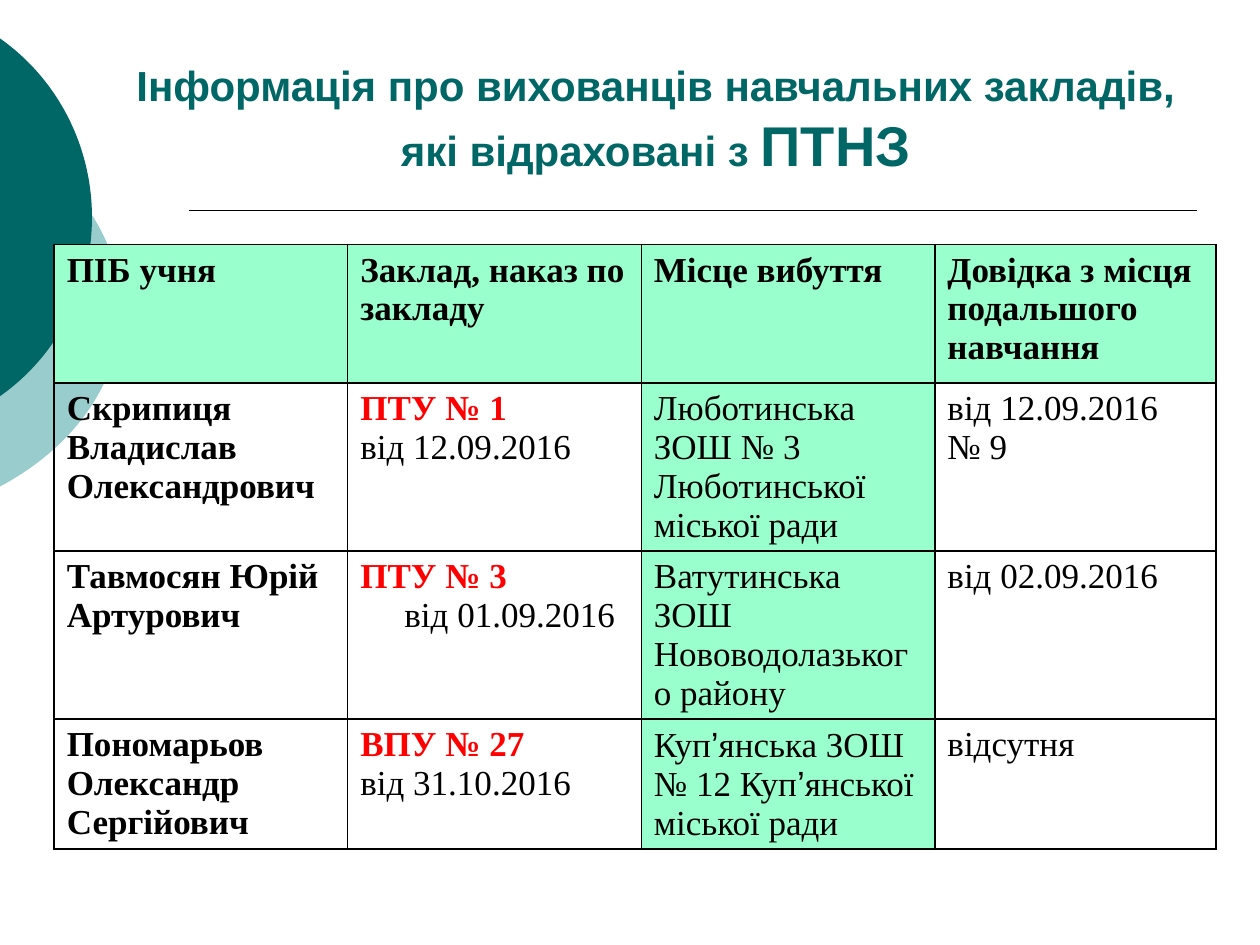
from dataclasses import dataclass

from lxml.etree import SubElement
from pptx import Presentation
from pptx.dml.color import RGBColor
from pptx.enum.shapes import MSO_CONNECTOR, MSO_SHAPE
from pptx.enum.text import MSO_ANCHOR, PP_ALIGN
from pptx.oxml.ns import qn
from pptx.util import Inches, Pt


@dataclass(frozen=True)
class Theme:
    teal: RGBColor = RGBColor(0x00, 0x66, 0x66)
    pale_teal: RGBColor = RGBColor(0x99, 0xCC, 0xCC)
    mint: RGBColor = RGBColor(0x99, 0xFF, 0xCC)
    red: RGBColor = RGBColor(0xFF, 0x00, 0x00)
    black: RGBColor = RGBColor(0x00, 0x00, 0x00)
    sans: str = "Arial"
    serif: str = "Times New Roman"
    title_size: Pt = Pt(24)
    accent_size: Pt = Pt(32)
    cell_size: Pt = Pt(20)
    line_width: Pt = Pt(1)


THEME = Theme()
HEADINGS = ["ПІБ учня", "Заклад, наказ по закладу", "Місце вибуття",
            "Довідка з місця подальшого навчання"]
# Pupil, school, order date, order indent, destination, certificate
PUPILS = [
    ("Скрипиця Владислав Олександрович", "ПТУ № 1", "від 12.09.2016", 0,
     "Люботинська ЗОШ № 3 Люботинської міської ради", "від 12.09.2016 № 9"),
    ("Тавмосян Юрій Артурович", "ПТУ № 3", "від 01.09.2016", 0.35,
     "Ватутинська ЗОШ Нововодолазького району", "від 02.09.2016"),
    ("Пономарьов Олександр Сергійович", "ВПУ № 27", "від 31.10.2016", 0,
     "Куп’янська ЗОШ № 12 Куп’янської міської ради", "відсутня"),
]


def apply_format(target, values):
    for name, value in values.items():
        setattr(target, name, value)


def add_run(paragraph, text, color=THEME.black, **values):
    run = paragraph.add_run()
    run.text = text
    apply_format(run.font, values)
    run.font.color.rgb = color


def add_disc(slide, left, top, width, height, color):
    disc = slide.shapes.add_shape(MSO_SHAPE.OVAL, left, top, width, height)
    disc.shadow.inherit = False
    disc.fill.solid()
    disc.fill.fore_color.rgb = color
    disc.line.fill.background()


def add_backdrop(slide):
    add_disc(slide, Inches(-3.54), Inches(0.75), Inches(4.5), Inches(3.42), THEME.pale_teal)
    add_disc(slide, Inches(-2.65), Inches(0), Inches(3.38), Inches(3.45), THEME.teal)


def add_rule(slide, left, top, width):
    rule = slide.shapes.add_connector(MSO_CONNECTOR.STRAIGHT, left, top, left + width, top)
    rule.line.color.rgb = THEME.black
    rule.line.width = THEME.line_width
    SubElement(rule._element.spPr, qn("a:effectLst"))


def add_title(slide, left, top, width, height):
    title = slide.shapes.title
    apply_format(title, dict(left=left, top=top, width=width, height=height))
    apply_format(title.text_frame, dict(vertical_anchor=MSO_ANCHOR.BOTTOM, word_wrap=True))
    heading = title.text_frame.paragraphs[0]
    heading.alignment = PP_ALIGN.CENTER
    for text, size in [
        ("Інформація про вихованців навчальних закладів, які відраховані з ", THEME.title_size),
        ("ПТНЗ", THEME.accent_size),
    ]:
        add_run(heading, text, THEME.teal, size=size, bold=True, name=THEME.sans)


def add_borders(cell):
    properties = cell._tc.get_or_add_tcPr()
    for position, side in enumerate(("lnL", "lnR", "lnT", "lnB")):
        border = SubElement(properties, qn(f"a:{side}"), w=str(THEME.line_width))
        fill = SubElement(border, qn("a:solidFill"))
        SubElement(fill, qn("a:srgbClr"), val=str(THEME.black))
        properties.insert(position, border)


def fill_cell(cell, lines, shaded):
    """Write (text, bold, color, indent) lines into a bordered cell."""
    if shaded:
        cell.fill.solid()
        cell.fill.fore_color.rgb = THEME.mint
    else:
        cell.fill.background()
    add_borders(cell)
    for number, (text, bold, color, indent) in enumerate(lines):
        frame = cell.text_frame
        paragraph = frame.add_paragraph() if number else frame.paragraphs[0]
        if indent:
            paragraph._p.get_or_add_pPr().set("marL", str(Inches(indent)))
        # The apostrophe is set in the sans face
        for part in text.replace("’", "|’|").split("|"):
            face = THEME.sans if part == "’" else THEME.serif
            add_run(paragraph, part, color, size=THEME.cell_size, bold=bold, name=face)


def add_pupil_table(slide, left, top, widths, heights):
    table = slide.shapes.add_table(len(heights), len(widths), left, top,
                                   sum(widths), sum(heights)).table
    apply_format(table, dict(first_row=False, horz_banding=False))
    for column, width in zip(table.columns, widths):
        column.width = width
    for row, height in zip(table.rows, heights):
        row.height = height

    rows = [[[(heading, True, THEME.black, 0)] for heading in HEADINGS]]
    for pupil, school, order, indent, destination, certificate in PUPILS:
        rows.append([
            [(pupil, True, THEME.black, 0)],
            [(school, True, THEME.red, 0), (order, False, THEME.black, indent)],
            [(destination, False, THEME.black, 0)],
            [(certificate, False, THEME.black, 0)],
        ])
    for r, row in enumerate(rows):
        for c, lines in enumerate(row):
            fill_cell(table.cell(r, c), lines, shaded=r == 0 or c == 2)
    # A wider margin keeps the certificate number together on its own line
    for r in range(1, len(rows)):
        table.cell(r, 3).margin_right = Inches(0.25)


def main():
    deck = Presentation()
    deck.slide_width, deck.slide_height = Inches(10), Inches(7.5)
    slide = deck.slides.add_slide(deck.slide_layouts[5])
    add_backdrop(slide)
    add_rule(slide, Inches(1.5), Inches(1.67), Inches(8))
    add_title(slide, Inches(0.75), Inches(0.21), Inches(8.91), Inches(1.25))
    add_pupil_table(slide, Inches(0.43), Inches(1.94),
                    [Inches(w) for w in (2.33, 2.33, 2.33, 2.23)],
                    [Inches(h) for h in (1.1, 1.33, 1.33, 1.03)])
    deck.save("out.pptx")


if __name__ == "__main__":
    main()
